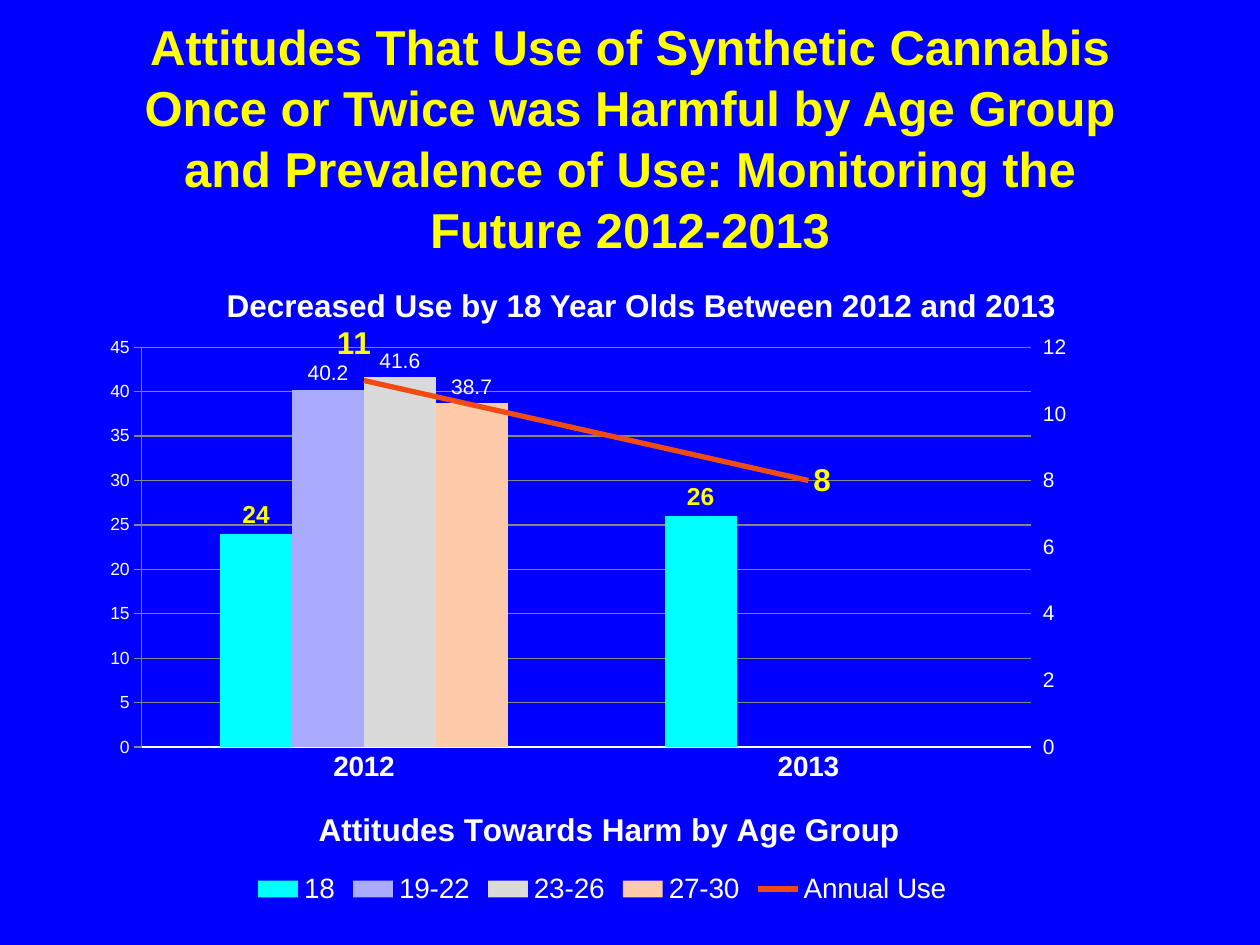
from pptx import Presentation
from pptx.chart.axis import ValueAxis
from pptx.chart.data import CategoryChartData
from pptx.dml.color import RGBColor
from pptx.enum.chart import (XL_CHART_TYPE as ChartType, XL_LABEL_POSITION as LabelPos,
                             XL_LEGEND_POSITION as LegendPos, XL_MARKER_STYLE as Marker,
                             XL_TICK_MARK as Tick)
from pptx.enum.text import MSO_ANCHOR, MSO_AUTO_SIZE, PP_ALIGN
from pptx.oxml import parse_xml
from pptx.oxml.ns import qn
from pptx.util import Inches, Pt

BLUE = RGBColor(0x00, 0x00, 0xFF)
YELLOW = RGBColor(0xFF, 0xFF, 0x00)
WHITE = RGBColor(0xFF, 0xFF, 0xFF)
ORANGE = RGBColor(0xF0, 0x4B, 0x10)
CYAN = RGBColor(0x00, 0xFF, 0xFF)
LILAC = RGBColor(0xAA, 0xAA, 0xFF)
GREY = RGBColor(0xDA, 0xDA, 0xDA)
PEACH = RGBColor(0xFF, 0xCA, 0xAA)

YEARS = ["2012", "2013"]
AGE_GROUPS = [
    ("18", (24, 26), CYAN),
    ("19-22", (40.2, None), LILAC),
    ("23-26", (41.6, None), GREY),
    ("27-30", (38.7, None), PEACH),
]
ANNUAL_USE = ("Annual Use", (11, 8))
C_NS = 'xmlns:c="http://schemas.openxmlformats.org/drawingml/2006/chart"'


def style_font(font, size, color=WHITE, bold=False):
    font.name = "Arial"
    font.size = Pt(size)
    font.bold = bold
    font.color.rgb = color


def write_text(tf, text, size, color=WHITE, bold=True, align=None, line_spacing=None):
    p = tf.paragraphs[0]
    p.alignment = align
    p.line_spacing = line_spacing
    r = p.add_run()
    r.text = text
    style_font(r.font, size, color, bold)


def add_title(slide, text):
    sp = slide.shapes.title
    sp.left, sp.top, sp.width, sp.height = map(Inches, (0.75, 0.67, 8.5, 1.25))
    tf = sp.text_frame
    tf.auto_size = MSO_AUTO_SIZE.NONE
    tf.word_wrap = True
    tf.vertical_anchor = MSO_ANCHOR.MIDDLE
    tf.margin_bottom = Inches(0.48)
    write_text(tf, text, 28, YELLOW, align=PP_ALIGN.CENTER, line_spacing=1.04)


def add_caption(slide, text):
    sp = slide.shapes.add_textbox(*map(Inches, (1.7, 2.22, 6.78, 1.06)))
    sp.text_frame.word_wrap = False
    write_text(sp.text_frame, text, 18)


def manual_layout(x, y, w=None, h=None, edge=False):
    """Layout in shares of the chart; with a size it places the inner plot area."""
    parts = [("x", x), ("y", y)]
    modes = ""
    if w is not None:
        parts += [("w", w), ("h", h)]
        modes = '<c:layoutTarget val="inner"/>'
    if edge:
        modes += '<c:xMode val="edge"/><c:yMode val="edge"/>'
    values = "".join(f'<c:{name} val="{v}"/>' for name, v in parts)
    return parse_xml(f"<c:layout {C_NS}><c:manualLayout>{modes}{values}"
                     "</c:manualLayout></c:layout>")


def replace_layout(parent, layout, index):
    for old in parent.findall(qn("c:layout")):
        parent.remove(old)
    parent.insert(index, layout)


def style_value_axis(axis, top, step, tick):
    axis.minimum_scale, axis.maximum_scale, axis.major_unit = 0, top, step
    axis.has_major_gridlines = False
    axis.major_tick_mark = tick
    axis.format.line.fill.background()
    style_font(axis.tick_labels.font, 12)


def style_category_axis(axis, title):
    axis.major_tick_mark = Tick.NONE
    axis.format.line.color.rgb = WHITE
    axis.format.line.width = Pt(0.75)
    style_font(axis.tick_labels.font, 16, bold=True)
    write_text(axis.axis_title.text_frame, title, 18)
    replace_layout(axis.axis_title._element, manual_layout(0.23, 0.83, edge=True), 1)


def label_values(series, size, color=WHITE, bold=False, position=LabelPos.OUTSIDE_END,
                 number_format=None):
    labels = series.data_labels
    labels.show_value = True
    labels.position = position
    style_font(labels.font, size, color, bold)
    if number_format:
        labels.number_format = number_format
        labels.number_format_is_linked = False


def move_last_series_to_line(chart):
    """Turn the last column series into a line on a right-hand axis; return that axis."""
    plot_area = chart._chartSpace.chart.plotArea
    bars = plot_area.find(qn("c:barChart"))
    ser = bars.findall(qn("c:ser"))[-1]
    for bar_only in ser.findall(qn("c:invertIfNegative")):
        ser.remove(bar_only)
    line = parse_xml(f'<c:lineChart {C_NS}><c:grouping val="standard"/>'
                     '<c:varyColors val="0"/><c:marker val="1"/>'
                     '<c:axId val="501"/><c:axId val="502"/></c:lineChart>')
    line.insert(2, ser)
    bars.addnext(line)
    hidden = parse_xml(
        f'<c:catAx {C_NS}><c:axId val="501"/><c:scaling><c:orientation val="minMax"/>'
        '</c:scaling><c:delete val="1"/><c:axPos val="b"/><c:crossAx val="502"/>'
        '<c:crosses val="autoZero"/></c:catAx>')
    right = parse_xml(
        f'<c:valAx {C_NS}><c:axId val="502"/><c:scaling><c:orientation val="minMax"/>'
        '</c:scaling><c:delete val="0"/><c:axPos val="r"/>'
        '<c:numFmt formatCode="0" sourceLinked="0"/><c:majorTickMark val="out"/>'
        '<c:minorTickMark val="none"/><c:tickLblPos val="nextTo"/>'
        '<c:crossAx val="501"/><c:crosses val="max"/></c:valAx>')
    left = plot_area.find(qn("c:valAx"))
    left.addnext(hidden)
    hidden.addnext(right)
    return ValueAxis(right)


def style_use_line(series):
    series.smooth = False
    series.marker.style = Marker.NONE
    series.format.line.color.rgb = ORANGE
    series.format.line.width = Pt(3)
    label_values(series, 18, YELLOW, True, LabelPos.RIGHT, "0")
    first = series.points[0].data_label
    style_font(first.font, 18, YELLOW, True)
    first.position = LabelPos.RIGHT
    replace_layout(first._dLbl, manual_layout(-0.03, -0.06), 1)


def add_harm_chart(slide):
    data = CategoryChartData()
    data.categories = YEARS
    for name, values, *_ in AGE_GROUPS + [ANNUAL_USE]:
        data.add_series(name, values)
    frame = slide.shapes.add_chart(ChartType.COLUMN_CLUSTERED,
                                   *map(Inches, (0.53, 2.26, 8.5, 4.96)), data)
    chart = frame.chart
    chart.has_title = False
    style_font(chart.font, 10)
    right_axis = move_last_series_to_line(chart)
    columns, line = chart.plots
    columns.gap_width = 219
    columns.overlap = 0
    columns.vary_by_categories = False
    for series, (name, _, color) in zip(columns.series, AGE_GROUPS):
        series.format.fill.solid()
        series.format.fill.fore_color.rgb = color
        if name == "18":
            label_values(series, 14, YELLOW, True, number_format="0")
        else:
            label_values(series, 12)
    style_use_line(line.series[0])

    style_category_axis(chart.category_axis, "Attitudes Towards Harm by Age Group")
    style_value_axis(chart.value_axis, 45, 5, Tick.NONE)
    chart.value_axis.tick_labels.number_format = "0"
    chart.value_axis.tick_labels.number_format_is_linked = False
    style_value_axis(right_axis, 12, 2, Tick.OUTSIDE)
    replace_layout(chart._chartSpace.chart.plotArea,
                   manual_layout(0.07, 0.1, 0.83, 0.64, edge=True), 0)
    chart.has_legend = True
    chart.legend.position = LegendPos.BOTTOM
    chart.legend.include_in_layout = False
    style_font(chart.legend.font, 16)


def main():
    prs = Presentation()
    prs.slide_width, prs.slide_height = Inches(10), Inches(7.5)
    slide = prs.slides.add_slide(prs.slide_layouts[5])
    slide.background.fill.solid()
    slide.background.fill.fore_color.rgb = BLUE
    add_title(slide, "Attitudes That Use of Synthetic Cannabis Once or Twice was Harmful "
                     "by Age Group and Prevalence of Use: Monitoring the Future 2012-2013")
    add_harm_chart(slide)
    add_caption(slide, "Decreased Use by 18 Year Olds Between 2012 and 2013")
    prs.save("out.pptx")


if __name__ == "__main__":
    main()
